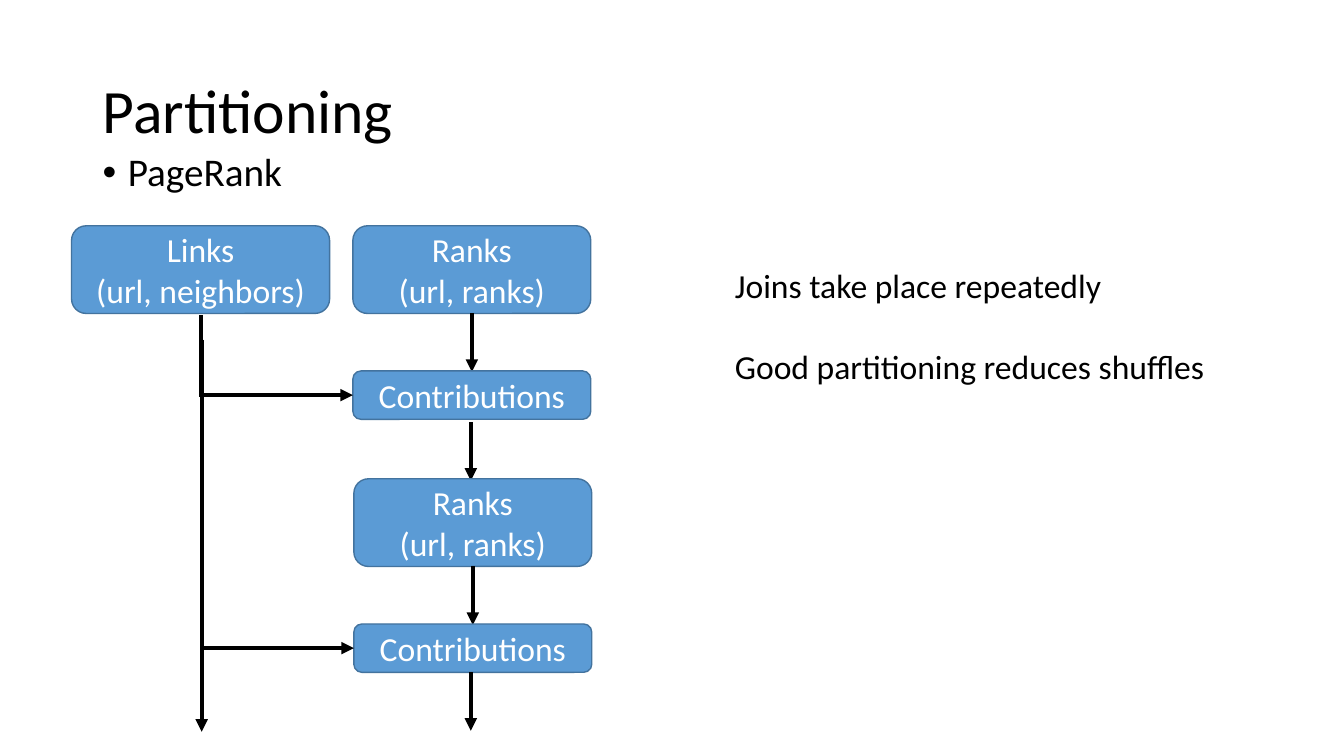
"""Build the Partitioning slide with its PageRank join diagram."""
from dataclasses import dataclass

import lxml.etree
import pptx
import pptx.dml.color
import pptx.enum.shapes
import pptx.enum.text
import pptx.oxml.ns
import pptx.util

Inches = pptx.util.Inches
Pt = pptx.util.Pt
qn = pptx.oxml.ns.qn


@dataclass(frozen=True)
class Theme:
    font: str = "Calibri"
    text: str = "000000"
    box_text: str = "FFFFFF"
    box_fill: str = "5B9BD5"
    box_line: str = "43739E"
    arrow: str = "000000"
    title_size: int = 44
    bullet_size: int = 28
    body_size: int = 24
    box_line_width: int = 1
    arrow_width: int = 3


THEME = Theme()


def rgb(value):
    return pptx.dml.color.RGBColor.from_string(value)


def write_lines(frame, lines, size, color, alignment=None, line_spacing=None, gap=0):
    frame.word_wrap = True
    for index, line in enumerate(lines):
        paragraph = frame.add_paragraph() if index else frame.paragraphs[0]
        paragraph.alignment = alignment
        paragraph.line_spacing = line_spacing
        if index:
            paragraph.space_before = Pt(gap)
        run = paragraph.add_run()
        run.text = line
        run.font.name = THEME.font
        run.font.size = Pt(size)
        run.font.color.rgb = rgb(color)


def add_text(slide, left, top, width, height, lines, size, **layout):
    box = slide.shapes.add_textbox(Inches(left), Inches(top), Inches(width), Inches(height))
    write_lines(box.text_frame, lines, size, THEME.text, **layout)
    return box.text_frame


def add_bullet(paragraph):
    paragraph.space_before = Pt(10)
    properties = paragraph._p.get_or_add_pPr()
    properties.set("marL", str(Inches(0.25)))
    properties.set("indent", str(Inches(-0.25)))
    lxml.etree.SubElement(properties, qn("a:buFont"), typeface="Arial")
    lxml.etree.SubElement(properties, qn("a:buChar"), char="•")


def add_box(slide, left, top, width, height, lines):
    shape = slide.shapes.add_shape(
        pptx.enum.shapes.MSO_SHAPE.ROUNDED_RECTANGLE,
        Inches(left), Inches(top), Inches(width), Inches(height))
    shape.shadow.inherit = False
    shape.fill.solid()
    shape.fill.fore_color.rgb = rgb(THEME.box_fill)
    shape.line.color.rgb = rgb(THEME.box_line)
    shape.line.width = Pt(THEME.box_line_width)
    shape.text_frame.vertical_anchor = pptx.enum.text.MSO_ANCHOR.MIDDLE
    write_lines(shape.text_frame, lines, THEME.body_size, THEME.box_text,
                alignment=pptx.enum.text.PP_ALIGN.CENTER)


def add_line(slide, start, end, arrow=True):
    connector = slide.shapes.add_connector(
        pptx.enum.shapes.MSO_CONNECTOR.STRAIGHT,
        *(Inches(value) for value in (*start, *end)))
    connector.line.color.rgb = rgb(THEME.arrow)
    connector.line.width = Pt(THEME.arrow_width)
    if arrow:
        lxml.etree.SubElement(connector.line._get_or_add_ln(), qn("a:tailEnd"), type="triangle")
    lxml.etree.SubElement(connector._element.spPr, qn("a:effectLst"))


def add_iteration(slide, left, top, links_x, output_top):
    """Draw one round: ranks joined with links to give contributions."""
    ranks_x = left + 1.18
    add_box(slide, left, top, 2.36, 0.87, ["Ranks", "(url, ranks)"])
    add_line(slide, (ranks_x, top + 0.87), (ranks_x, top + 1.45))
    add_box(slide, left, top + 1.44, 2.36, 0.48, ["Contributions"])
    add_line(slide, (links_x, top + 1.68), (left, top + 1.68))
    add_line(slide, (4.67, output_top), (4.67, output_top + 0.58))


def main():
    presentation = pptx.Presentation()
    presentation.slide_width = Inches(13.33)
    presentation.slide_height = Inches(7.5)
    slide = presentation.slides.add_slide(presentation.slide_layouts[6])

    title = add_text(slide, 0.92, 0.4, 11.5, 1.45, ["Partitioning"],
                     THEME.title_size, line_spacing=0.9)
    title.vertical_anchor = pptx.enum.text.MSO_ANCHOR.MIDDLE
    topic = add_text(slide, 0.92, 1.47, 11.5, 4.76, ["PageRank"],
                     THEME.bullet_size, line_spacing=0.9)
    add_bullet(topic.paragraphs[0])
    add_text(slide, 7.19, 2.58, 5.98, 1.31,
             ["Joins take place repeatedly", "Good partitioning reduces shuffles"],
             THEME.body_size, gap=29)

    add_box(slide, 0.71, 2.24, 2.56, 0.87, ["Links", "(url, neighbors)"])
    add_line(slide, (1.99, 3.13), (1.99, 3.94), arrow=False)
    add_line(slide, (2, 3.37), (2, 7.26))
    add_iteration(slide, 3.5, 2.24, 1.99, 4.19)
    add_iteration(slide, 3.51, 4.75, 2, 6.67)

    presentation.save("out.pptx")


if __name__ == "__main__":
    main()
